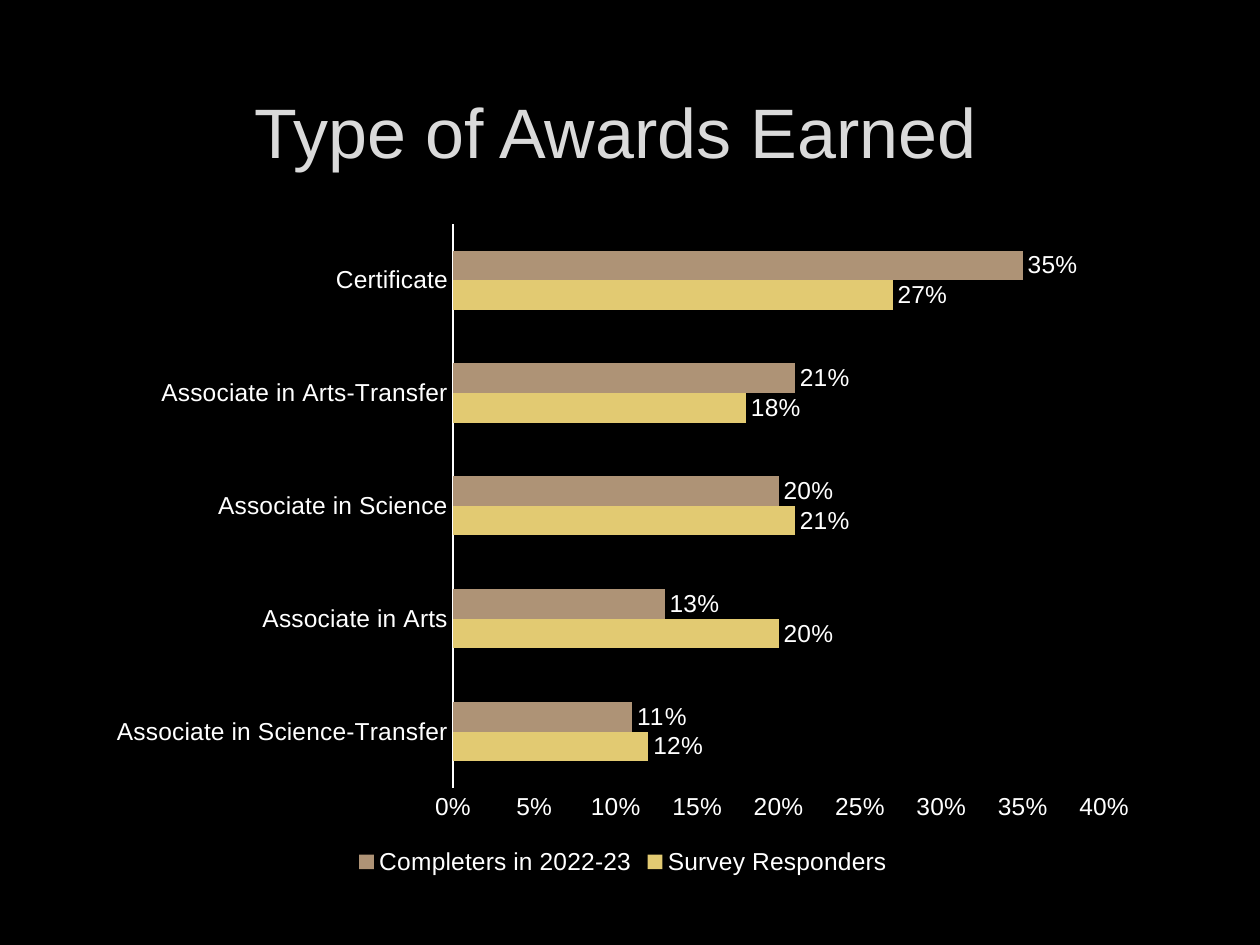
from pptx import Presentation
from pptx.chart.data import CategoryChartData
from pptx.dml.color import RGBColor
from pptx.enum import chart as charts, text
from pptx.util import Inches, Pt

BLACK, WHITE, SILVER = "000000", "FFFFFF", "DADADA"
CATEGORIES = [
    "Associate in Science-Transfer",
    "Associate in Arts",
    "Associate in Science",
    "Associate in Arts-Transfer",
    "Certificate",
]
SERIES = [
    ("Survey Responders", "E2CA72", (0.12, 0.2, 0.21, 0.18, 0.27)),
    ("Completers in 2022-23", "AE9376", (0.11, 0.13, 0.2, 0.21, 0.35)),
]


def paint(fill, color):
    fill.solid()
    fill.fore_color.rgb = RGBColor.from_string(color)


def set_font(font, size, color):
    font.name = "Arial"
    font.size = Pt(size)
    font.bold = False
    paint(font.fill, color)


def add_title(page, words):
    title = page.shapes.title
    title.left, title.top = Inches(0.64), Inches(0.51)
    title.width, title.height = Inches(8.49), Inches(1.06)
    frame = title.text_frame
    frame.text = words
    frame.vertical_anchor = text.MSO_ANCHOR.MIDDLE
    para = frame.paragraphs[0]
    para.alignment = text.PP_ALIGN.CENTER
    set_font(para.font, 40, SILVER)


def style_axis(axis):
    axis.has_major_gridlines = False
    axis.major_tick_mark = charts.XL_TICK_MARK.NONE
    axis.minor_tick_mark = charts.XL_TICK_MARK.NONE
    set_font(axis.tick_labels.font, 14, WHITE)


def style_series(series, color):
    paint(series.format.fill, color)
    series.invert_if_negative = False
    labels = series.data_labels
    labels.show_value = True
    labels.position = charts.XL_LABEL_POSITION.OUTSIDE_END
    labels.number_format = "0%"
    labels.number_format_is_linked = False
    set_font(labels.font, 14, WHITE)


def add_awards_chart(page):
    data = CategoryChartData(number_format="0%")
    data.categories = CATEGORIES
    for name, color, values in SERIES:
        data.add_series(name, values)
    chart = page.shapes.add_chart(
        charts.XL_CHART_TYPE.BAR_CLUSTERED,
        Inches(0.76), Inches(1.67), Inches(8.37), Inches(5.32), data,
    ).chart
    chart.has_title = False
    set_font(chart.font, 14, WHITE)

    plot = chart.plots[0]
    plot.gap_width = 182
    plot.overlap = 0
    plot.vary_by_categories = False
    for series, (name, color, values) in zip(plot.series, SERIES):
        style_series(series, color)

    style_axis(chart.category_axis)
    line = chart.category_axis.format.line
    line.width = Pt(0.75)
    paint(line.fill, WHITE)

    values_axis = chart.value_axis
    style_axis(values_axis)
    values_axis.minimum_scale = 0
    values_axis.maximum_scale = 0.4
    values_axis.major_unit = 0.05
    values_axis.tick_labels.number_format = "0%"
    values_axis.tick_labels.number_format_is_linked = False
    values_axis.format.line.fill.background()

    chart.has_legend = True
    chart.legend.position = charts.XL_LEGEND_POSITION.BOTTOM
    chart.legend.include_in_layout = False
    set_font(chart.legend.font, 14, WHITE)


def main():
    deck = Presentation()
    deck.slide_width, deck.slide_height = Inches(10), Inches(7.5)
    page = deck.slides.add_slide(deck.slide_layouts[5])
    paint(page.background.fill, BLACK)
    add_title(page, "Type of Awards Earned")
    add_awards_chart(page)
    deck.save("out.pptx")


if __name__ == "__main__":
    main()
